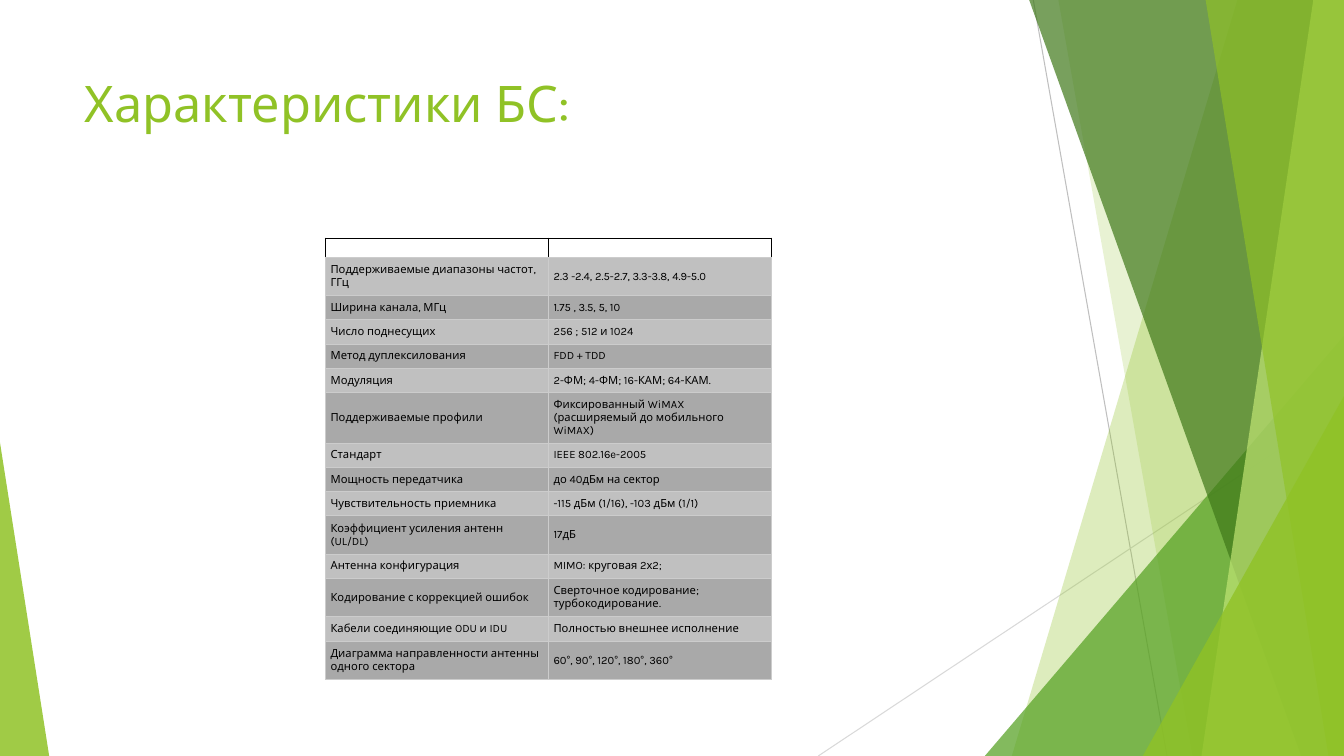
from lxml.etree import SubElement
from pptx import Presentation
from pptx.dml.color import RGBColor
from pptx.enum.shapes import MSO_CONNECTOR, MSO_SHAPE
from pptx.enum.text import MSO_ANCHOR
from pptx.oxml.ns import qn
from pptx.util import Cm, Pt

WIDE, HIGH = 33.87, 19.05
INK = {
    "lime": "90C226", "green": "54A021", "dark": "3F7819", "pale": "C0E474",
    "line": "BFBFBF", "thin": "D9D9D9", "edge": "CCCCCC", "black": "000000",
    "light": "C0C0C0", "grey": "A9A9A9",
}
ROWS = [
    ("Поддерживаемые диапазоны частот, ГГц", "2.3 -2.4, 2.5-2.7, 3.3-3.8, 4.9-5.0"),
    ("Ширина канала, МГц", "1.75 , 3.5, 5, 10"),
    ("Число поднесущих", "256 ; 512 и 1024"),
    ("Метод дуплексилования", "FDD + TDD"),
    ("Модуляция", "2-ФМ; 4-ФМ; 16-КАМ; 64-КАМ."),
    ("Поддерживаемые профили", "Фиксированный WiMAX (расширяемый до мобильного WiMAX)"),
    ("Стандарт", "IEEE 802.16e-2005"),
    ("Мощность передатчика", "до 40дБм на сектор"),
    ("Чувствительность приемника", "-115 дБм (1/16), -103 дБм (1/1)"),
    ("Коэффициент усиления антенн (UL/DL)", "17дБ"),
    ("Антенна конфигурация", "MIMO: круговая 2х2;"),
    ("Кодирование с коррекцией ошибок", "Сверточное кодирование; турбокодирование."),
    ("Кабели соединяющие ODU и IDU", "Полностью внешнее исполнение"),
    ("Диаграмма направленности антенны одного сектора", "60°, 90°, 120°, 180°, 360°"),
]


class Deck:
    def __init__(self, slide, font):
        self.shapes = slide.shapes
        self.font = font

    def color(self, name):
        return RGBColor.from_string(INK[name])

    def style(self, run, size, name):
        run.font.name = self.font
        run.font.size = Pt(size)
        run.font.color.rgb = self.color(name)

    def paint(self, shape, name, alpha):
        shape.shadow.inherit = False
        shape.line.fill.background()
        shape.fill.solid()
        shape.fill.fore_color.rgb = self.color(name)
        tint = shape.fill._xPr.find(".//" + qn("a:srgbClr"))
        SubElement(tint, qn("a:alpha")).set("val", str(alpha * 1000))

    def line(self, x1, y1, x2, y2, name):
        link = self.shapes.add_connector(
            MSO_CONNECTOR.STRAIGHT, Cm(x1), Cm(y1), Cm(x2), Cm(y2))
        link.line.color.rgb = self.color(name)
        link.line.width = Pt(0.75)
        SubElement(link._element.spPr, qn("a:effectLst"))

    def band(self, top, foot, name, alpha):
        """A facet from a slanted left side to the slide's right edge."""
        pen = self.shapes.build_freeform(Cm(top), Cm(-0.02))
        pen.add_line_segments([
            (Cm(WIDE), Cm(-0.02)), (Cm(WIDE), Cm(HIGH)), (Cm(foot), Cm(HIGH))])
        self.paint(pen.convert_to_shape(), name, alpha)

    def wedge(self, left, top, right, peak, name, alpha):
        """A triangle that stands on the slide's bottom edge."""
        shape = self.shapes.add_shape(
            MSO_SHAPE.ISOSCELES_TRIANGLE,
            Cm(left), Cm(top), Cm(right - left), Cm(HIGH - top))
        shape.adjustments[0] = peak
        self.paint(shape, name, alpha)

    def title(self, text, left, top, width, height):
        frame = self.shapes.add_textbox(
            Cm(left), Cm(top), Cm(width), Cm(height)).text_frame
        frame.word_wrap = True
        frame.text = text
        self.style(frame.paragraphs[0].runs[0], 36, "lime")

    def border(self, cell, sides):
        props = cell._tc.get_or_add_tcPr()
        for side, name in sides.items():
            edge = SubElement(props, qn("a:ln" + side), w=str(Pt(0.75)))
            fill = SubElement(edge, qn("a:solidFill"))
            SubElement(fill, qn("a:srgbClr"), val=INK[name])

    def cell(self, cell, text, fill):
        cell.margin_left = cell.margin_right = Cm(0.13)
        cell.margin_top = cell.margin_bottom = Cm(0.13)
        cell.vertical_anchor = MSO_ANCHOR.MIDDLE
        self.border(cell, dict.fromkeys("LRTB", "edge"))
        cell.fill.solid()
        cell.fill.fore_color.rgb = self.color(fill)
        cell.text_frame.text = text
        self.style(cell.text_frame.paragraphs[0].runs[0], 8, "black")

    def head(self, cell):
        cell.margin_top = cell.margin_bottom = 0
        self.border(cell, {"L": "black", "R": "black", "T": "black", "B": "edge"})
        cell.fill.background()
        SubElement(cell.text_frame.paragraphs[0]._p, qn("a:endParaRPr"), sz="800")

    def table(self, rows, left, top, width):
        # Rows with a long text are two lines high
        tall = [0.97 if max(map(len, row)) > 33 else 0.61 for row in rows]
        highs = [0.48] + tall
        grid = self.shapes.add_table(
            len(highs), 2, Cm(left), Cm(top), Cm(width), Cm(sum(highs))).table
        grid.first_row = grid.horz_banding = False
        for row, high in zip(grid.rows, highs):
            row.height = Cm(high)
        for col in range(2):
            grid.columns[col].width = Cm(width / 2)
            self.head(grid.cell(0, col))
            for num, row in enumerate(rows, 1):
                fill = "light" if num % 2 else "grey"
                self.cell(grid.cell(num, col), row[col], fill)


def main():
    show = Presentation()
    show.slide_width, show.slide_height = Cm(WIDE), Cm(HIGH)
    deck = Deck(show.slides.add_slide(show.slide_layouts[6]), "Karla")

    # Facets at the sides
    deck.line(26.04, 0, 29.41, HIGH, "line")
    deck.line(WIDE, 10.24, 20.62, HIGH, "thin")
    deck.band(31.19, 25.5, "lime", 30)
    deck.band(26.67, 30.05, "lime", 20)
    deck.wedge(24.82, 8.46, WIDE, 1, "green", 72)
    deck.band(25.93, 32.79, "dark", 70)
    deck.band(33.1, 30.28, "pale", 70)
    deck.band(30.38, 33.48, "lime", 65)
    deck.wedge(28.8, 9.98, WIDE, 1, "lime", 80)
    deck.wedge(0, 11.15, 1.24, 0, "lime", 85)

    # Title and table
    deck.title("Характеристики БС:", 1.88, 1.7, 23.88, 3.66)
    deck.table(ROWS, 8.2, 6, 11.24)

    show.save("out.pptx")


if __name__ == "__main__":
    main()
